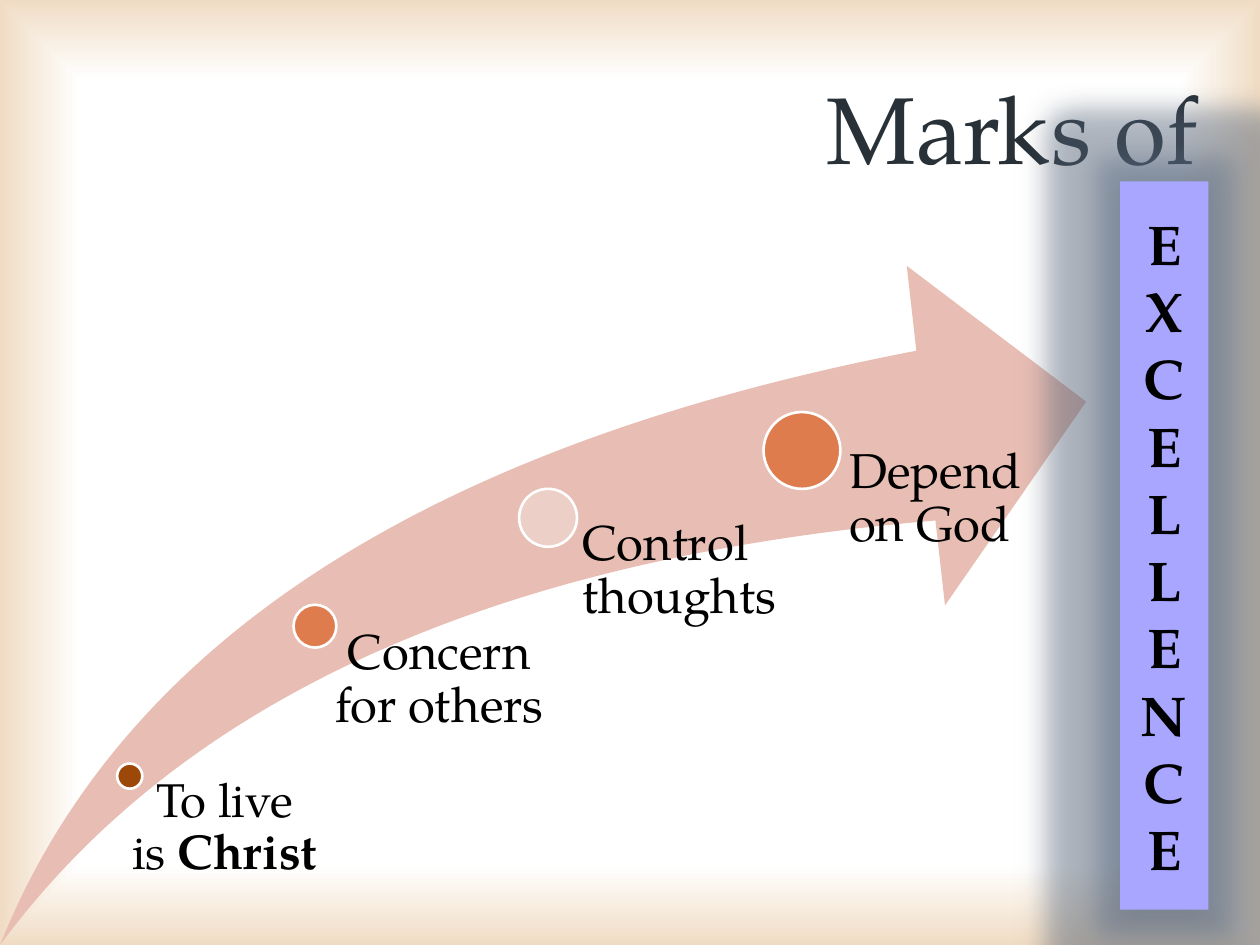
import dataclasses
import typing

import lxml.etree
import pptx
import pptx.dml.color
import pptx.enum.shapes
import pptx.enum.text
import pptx.oxml
import pptx.util

COLUMNS, ROWS = 100, 75
CELL = pptx.util.Inches(0.1)
FONT = "TeX Gyre Pagella"
NAMESPACE = 'xmlns:a="http://schemas.openxmlformats.org/drawingml/2006/main"'
SHAPES = pptx.enum.shapes.MSO_SHAPE
ALIGN = pptx.enum.text.PP_ALIGN
ANCHOR = pptx.enum.text.MSO_ANCHOR

VIGNETTE = f"""<a:gradFill {NAMESPACE} rotWithShape="1"><a:gsLst>
<a:gs pos="0"><a:srgbClr val="FFFFFF"/></a:gs>
<a:gs pos="83000"><a:srgbClr val="FFFFFF"/></a:gs>
<a:gs pos="100000"><a:srgbClr val="F0DCC4"/></a:gs></a:gsLst>
<a:path path="rect"><a:fillToRect l="50000" t="50000" r="50000" b="50000"/></a:path>
</a:gradFill>"""

GLOW = f"""<a:effectLst {NAMESPACE}>
<a:glow rad="360000"><a:srgbClr val="5E7088"><a:alpha val="40000"/></a:srgbClr></a:glow>
<a:outerShdw blurRad="190500" dist="38100" dir="5400000" rotWithShape="0">
<a:srgbClr val="000000"><a:alpha val="30000"/></a:srgbClr></a:outerShdw></a:effectLst>"""


class Box(typing.NamedTuple):
    left: float
    top: float
    width: float
    height: float

    def lengths(self) -> list[int]:
        return [round(value * CELL) for value in self]


@dataclasses.dataclass(frozen=True)
class Mark:
    dot: Box
    color: str
    label: Box
    inset: float
    lines: tuple[str, ...]
    size: float = 28
    strong: str = ""
    indent: float = 0


MARKS = (
    Mark(Box(9.3, 60.6, 2, 2), "9B4809", Box(9.4, 61.6, 16.5, 12.8), 1.1,
         ("To live", "is "), 27, "Christ", 1.9),
    Mark(Box(23.3, 48, 3.4, 3.4), "DE7C4E", Box(24.8, 49.8, 20.9, 24.6), 1.8,
         ("Concern for others",), indent=1),
    Mark(Box(41.2, 38.8, 4.6, 4.6), "ECD0C8", Box(43.8, 41.1, 18.1, 33.3), 2.4,
         ("Control thoughts",)),
    Mark(Box(60.6, 32.7, 6.1, 6.1), "DE7C4E", Box(64.2, 35.4, 18.2, 38.6), 3.2,
         ("Depend on God",)),
)


def rgb(color: str) -> pptx.dml.color.RGBColor:
    return pptx.dml.color.RGBColor.from_string(color)


def apply(target: typing.Any, values: dict[str, typing.Any]) -> None:
    for name, value in values.items():
        setattr(target, name, value)


def add_run(paragraph: typing.Any, text: str, size: float, color: str = "000000",
            bold: bool = False) -> None:
    run = paragraph.add_run()
    run.text = text
    apply(run.font, {"name": FONT, "size": pptx.util.Pt(size), "bold": bold})
    run.font.color.rgb = rgb(color)


def add_shape(slide: typing.Any, kind: typing.Any, box: Box, color: str,
              line: str = "") -> typing.Any:
    shape = slide.shapes.add_shape(kind, *box.lengths())
    shape.shadow.inherit = False
    shape.fill.solid()
    shape.fill.fore_color.rgb = rgb(color)
    if line:
        shape.line.color.rgb = rgb(line)
        shape.line.width = pptx.util.Pt(1.5)
    else:
        shape.line.fill.background()
    return shape


def add_vignette(slide: typing.Any) -> None:
    shape = add_shape(slide, SHAPES.RECTANGLE, Box(0, 0, COLUMNS, ROWS), "FFFFFF")
    properties = shape.fill._xPr
    properties.replace(properties.solidFill if hasattr(properties, "solidFill")
                       else properties.eg_fillProperties, pptx.oxml.parse_xml(VIGNETTE))
    tree = slide.shapes._spTree
    tree.remove(shape._element)
    tree.insert(2, shape._element)


def add_title(slide: typing.Any, text: str, box: Box) -> None:
    title = slide.shapes.title
    apply(title, dict(zip(("left", "top", "width", "height"), box.lengths())))
    apply(title.text_frame, {"vertical_anchor": ANCHOR.MIDDLE, "word_wrap": True})
    paragraph = title.text_frame.paragraphs[0]
    paragraph.alignment = ALIGN.CENTER
    add_run(paragraph, text, 54, "283138")


def add_mark(slide: typing.Any, mark: Mark) -> None:
    add_shape(slide, SHAPES.OVAL, mark.dot, mark.color, "FFFFFF")
    frame = slide.shapes.add_textbox(*mark.label.lengths()).text_frame
    apply(frame, {"word_wrap": True, "margin_left": round(mark.inset * CELL),
                  "margin_top": 0, "margin_right": 0, "margin_bottom": 0})
    paragraph = frame.paragraphs[0]
    apply(paragraph, {"line_spacing": 0.9, "alignment": ALIGN.LEFT})
    paragraph._p.get_or_add_pPr().set("indent", str(round(mark.indent * CELL)))
    for index, line in enumerate(mark.lines):
        if index:
            paragraph.add_line_break()
        add_run(paragraph, line, mark.size)
    if mark.strong:
        add_run(paragraph, mark.strong, 28, bold=True)


def add_banner(slide: typing.Any, word: str, box: Box) -> None:
    shape = add_shape(slide, SHAPES.RECTANGLE, box, "A8A6FF")
    properties = shape.fill._xPr
    effects = properties.find(pptx.oxml.ns.qn("a:effectLst"))
    properties.replace(effects, pptx.oxml.parse_xml(GLOW))
    frame = shape.text_frame
    apply(frame, {"word_wrap": True, "vertical_anchor": ANCHOR.MIDDLE})
    for index, letter in enumerate(word):
        paragraph = frame.add_paragraph() if index else frame.paragraphs[0]
        paragraph.alignment = ALIGN.CENTER
        add_run(paragraph, letter, 32, bold=True)


def main() -> None:
    """Build the slide of four marks rising along an arrow to excellence."""
    presentation = pptx.Presentation()
    apply(presentation, {"slide_width": COLUMNS * CELL, "slide_height": ROWS * CELL})
    slide = presentation.slides.add_slide(presentation.slide_layouts[5])
    add_vignette(slide)
    add_title(slide, "Marks of", Box(60.6, 2.3, 39.5, 15.5))
    arrow = add_shape(slide, SHAPES.SWOOSH_ARROW, Box(0, 21.1, 86.2, 53.9), "E8BEB4")
    arrow.adjustments[0] = arrow.adjustments[1] = 0.25
    for mark in MARKS:
        add_mark(slide, mark)
    add_banner(slide, "EXCELLENCE", Box(88.9, 14.4, 7, 57.8))
    presentation.save("out.pptx")


if __name__ == "__main__":
    main()
